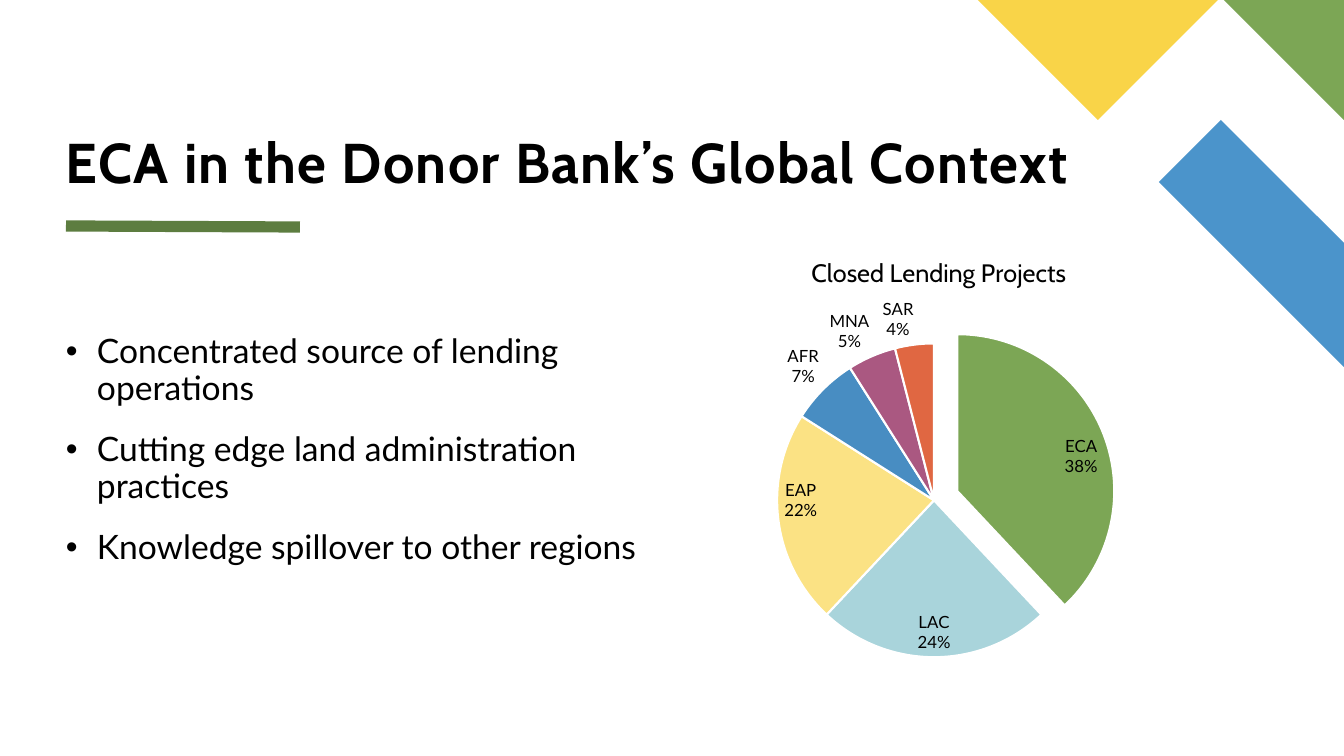
from dataclasses import dataclass

from lxml import etree
from pptx import Presentation
from pptx import util as u
from pptx.chart import data as chart_data
from pptx.dml import color
from pptx.enum import chart as chart_enum
from pptx.enum import shapes, text
from pptx.oxml import ns, parse_xml

EMU_PER_PX = 12192000 / 1344
BLACK = "000000"
WHITE = "FFFFFF"
OUTSIDE = chart_enum.XL_LABEL_POSITION.OUTSIDE_END
INSIDE = chart_enum.XL_LABEL_POSITION.INSIDE_END


@dataclass(frozen=True)
class Ribbon:
    points: tuple[tuple[int, int], ...]
    fill: str


@dataclass(frozen=True)
class Region:
    name: str
    share: int
    fill: str
    label_position: chart_enum.XL_LABEL_POSITION


RIBBONS = (
    Ribbon(((1344, 367), (1344, 243), (1221, 120), (1159, 182)), "4B94CB"),
    Ribbon(((1344, 120), (1344, 0), (1224, 0)), "7CA655"),
    Ribbon(((978, 0), (1098, 120), (1218, 0)), "F9D448"),
)
REGIONS = (
    Region("ECA", 38, "7CA655", INSIDE),
    Region("LAC", 24, "A9D4DB", INSIDE),
    Region("EAP", 22, "FBE284", INSIDE),
    Region("AFR", 7, "488DC2", OUTSIDE),
    Region("MNA", 5, "AA5881", OUTSIDE),
    Region("SAR", 4, "E06742", OUTSIDE),
)
BULLETS = (
    "Concentrated source of lending operations",
    "Cutting edge land administration practices",
    "Knowledge spillover to other regions",
)


def px(length: int) -> int:
    return round(length * EMU_PER_PX)


def rgb(value: str) -> color.RGBColor:
    return color.RGBColor.from_string(value)


def style_font(font, name: str, size: int, bold: bool = False) -> None:
    font.name = name
    font.size = u.Pt(size)
    font.bold = bold
    font.color.rgb = rgb(BLACK)


def add_text(slide, lines, box, *, font, size, bold=False, line_spacing=1.0,
             space_before=0, letter_spacing=0, bullet_indent=0, top_inset=0,
             anchor=text.MSO_ANCHOR.TOP) -> None:
    frame = slide.shapes.add_textbox(*map(px, box)).text_frame
    frame.word_wrap = True
    frame.vertical_anchor = anchor
    frame.margin_left = frame.margin_right = frame.margin_bottom = 0
    frame.margin_top = px(top_inset)
    for index, line in enumerate(lines):
        paragraph = frame.add_paragraph() if index else frame.paragraphs[0]
        paragraph.line_spacing = line_spacing
        paragraph.space_before = u.Pt(space_before)
        run = paragraph.add_run()
        run.text = line
        style_font(run.font, font, size, bold)
        if letter_spacing:
            run.font._element.set("spc", str(letter_spacing * 100))
        if bullet_indent:
            properties = paragraph._p.get_or_add_pPr()
            properties.set("marL", str(px(bullet_indent)))
            properties.set("indent", str(-px(bullet_indent)))
            etree.SubElement(properties, ns.qn("a:buFont")).set("typeface", "Arial")
            etree.SubElement(properties, ns.qn("a:buChar")).set("char", "•")


def add_ribbon(slide, ribbon: Ribbon) -> None:
    builder = slide.shapes.build_freeform(*ribbon.points[0], scale=EMU_PER_PX)
    builder.add_line_segments(ribbon.points[1:], close=True)
    shape = builder.convert_to_shape()
    shape.shadow.inherit = False
    shape.fill.solid()
    shape.fill.fore_color.rgb = rgb(ribbon.fill)
    shape.line.fill.background()


def add_rule(slide, start: tuple[int, int], end: tuple[int, int], fill: str, width: int) -> None:
    rule = slide.shapes.add_connector(
        shapes.MSO_CONNECTOR.STRAIGHT, *map(px, start + end))
    rule.line.color.rgb = rgb(fill)
    rule.line.width = u.Pt(width)
    etree.SubElement(rule._element.spPr, ns.qn("a:effectLst"))


def manual_layout(**settings: str | float):
    children = "".join(f'<c:{key} val="{value}"/>' for key, value in settings.items())
    return parse_xml(f"<c:layout {ns.nsdecls('c')}><c:manualLayout>{children}"
                     "</c:manualLayout></c:layout>")


def add_pie(slide, title: str, regions: tuple[Region, ...], box: tuple[int, ...]) -> None:
    data = chart_data.CategoryChartData()
    data.categories = [region.name for region in regions]
    data.add_series("Series 1", [region.share for region in regions])
    chart = slide.shapes.add_chart(
        chart_enum.XL_CHART_TYPE.PIE, *map(px, box), data).chart
    style_font(chart.font, "Lato", 10)
    chart.has_legend = False
    chart.has_title = True
    paragraph = chart.chart_title.text_frame.paragraphs[0]
    run = paragraph.add_run()
    run.text = title
    style_font(run.font, "Cabin", 18)
    chart.chart_title.include_in_layout = False
    title_element = chart.chart_title._element
    for layout in title_element.findall(ns.qn("c:layout")):
        title_element.remove(layout)
    title_element.find(ns.qn("c:tx")).addnext(
        manual_layout(xMode="edge", yMode="edge", x=0.26, y=0.04))

    plot_area = chart._chartSpace.chart.plotArea
    for layout in plot_area.findall(ns.qn("c:layout")):
        plot_area.remove(layout)
    plot_area.insert(0, manual_layout(
        layoutTarget="inner", xMode="edge", yMode="edge", x=0.2, y=0.25, w=0.61, h=0.71))

    plot = chart.plots[0]
    plot.vary_by_categories = True
    series = plot.series[0]
    for index, region in enumerate(regions):
        point = series.points[index]
        point.format.fill.solid()
        point.format.fill.fore_color.rgb = rgb(region.fill)
        point.format.line.color.rgb = rgb(WHITE)
        point.format.line.width = u.Pt(1.5)
        style_font(point.data_label.font, "Lato", 12)
        point.data_label.position = region.label_position
    for label in series._element.iter(ns.qn("c:dLbl")):
        for name, shown in (("showVal", "0"), ("showCatName", "1"), ("showPercent", "1")):
            label.find(ns.qn(f"c:{name}")).set("val", shown)
        etree.SubElement(label, ns.qn("c:separator")).text = "\n"
    first_point = series._element.find(ns.qn("c:dPt"))
    explosion = etree.Element(ns.qn("c:explosion"), val="16")
    first_point.find(ns.qn("c:spPr")).addprevious(explosion)


def main() -> None:
    presentation = Presentation()
    presentation.slide_width = px(1344)
    presentation.slide_height = px(756)
    slide = presentation.slides.add_slide(presentation.slide_layouts[6])
    for ribbon in RIBBONS:
        add_ribbon(slide, ribbon)
    add_rule(slide, (66, 226), (300, 227), "5D7D40", 8)
    add_text(slide, ["ECA in the Donor Bank’s Global Context"], (66, 30, 1078, 164),
             font="Cabin", size=40, bold=True, line_spacing=0.8, letter_spacing=1,
             anchor=text.MSO_ANCHOR.BOTTOM)
    add_text(slide, BULLETS, (66, 330, 586, 317), font="Lato", size=24,
             line_spacing=0.9, space_before=18, bullet_indent=31, top_inset=5)
    add_pie(slide, "Closed Lending Projects", REGIONS, (672, 233, 519, 442))
    presentation.save("out.pptx")


if __name__ == "__main__":
    main()
